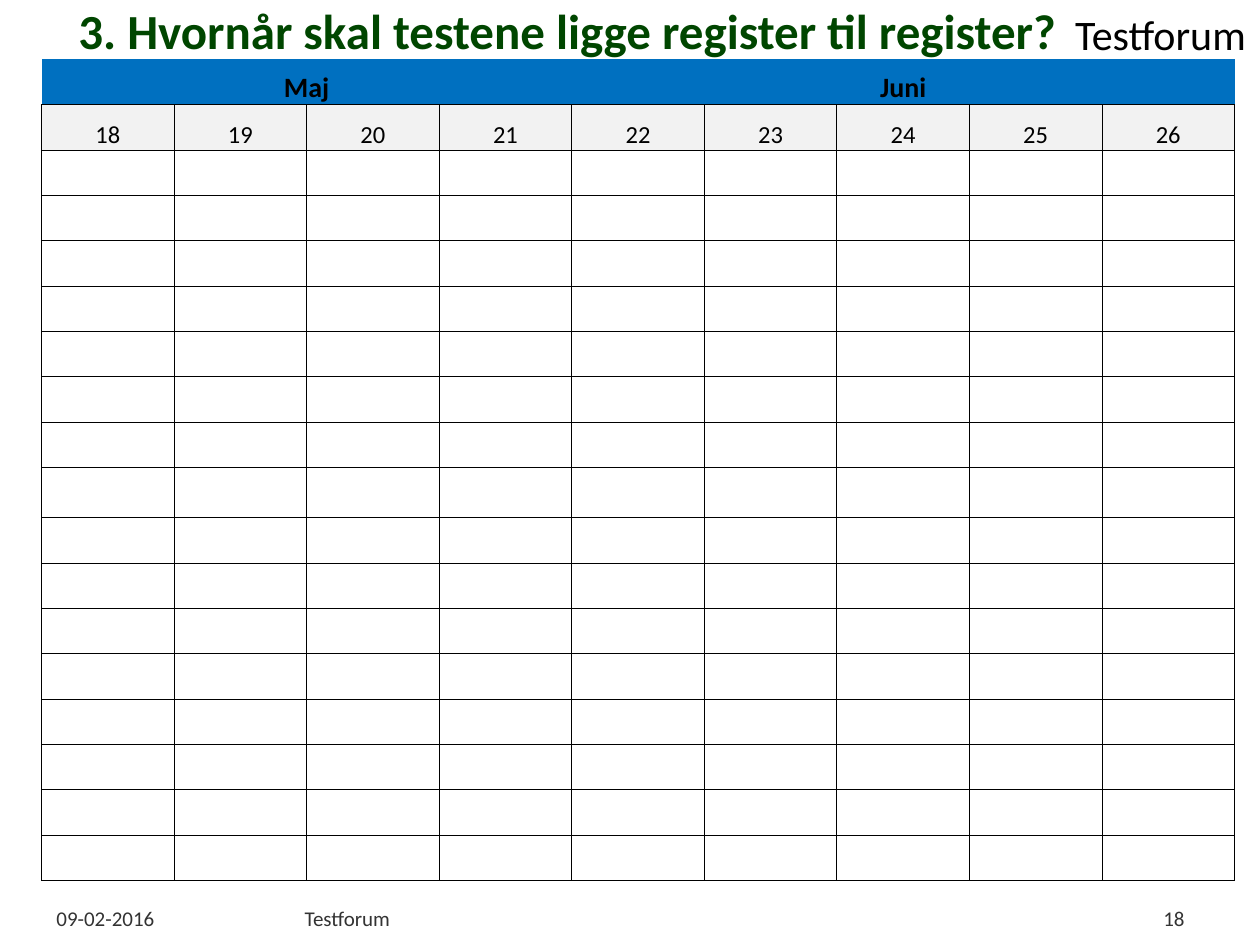
from dataclasses import dataclass
from lxml.etree import SubElement
from pptx import Presentation
from pptx.dml.color import RGBColor as Color
from pptx.enum.text import MSO_ANCHOR as Anchor, PP_ALIGN as Align
from pptx.oxml.ns import qn
from pptx.util import Inches, Pt


@dataclass(frozen=True)
class Theme:
    font: str = "Calibri"
    black: str = "000000"
    green: str = "004600"
    gray: str = "333333"
    blue: str = "0070C0"
    pale: str = "F2F2F2"
    title: int = 28
    brand: int = 24
    month: int = 16
    week: int = 14
    foot: int = 12
    line: float = 0.5


@dataclass(frozen=True)
class Label:
    text: str
    left: float
    top: float
    width: float
    height: float
    size: int
    color: str
    align: Align = Align.LEFT
    bold: bool = False
    anchor: Anchor = Anchor.TOP
    wrap: bool = True


@dataclass(frozen=True)
class Month:
    name: str
    first: int
    last: int


THEME = Theme()
FOOT = dict(top=7.14, height=0.16, size=THEME.foot, color=THEME.gray)
BRAND = Label("Testforum", 8.42, 0.02, 1.58, 0.5, THEME.brand, THEME.black,
              Align.CENTER, wrap=False)
TITLE = Label("3. Hvornår skal testene ligge register til register?",
              0, -0.08, 9, 0.63, THEME.title, THEME.green,
              Align.CENTER, True, Anchor.MIDDLE)
FEET = [
    Label("09-02-2016", left=0.35, width=2.37, **FOOT),
    Label("Testforum", left=2.32, width=6.22, **FOOT),
    Label("18", left=8.78, width=0.72, align=Align.RIGHT, **FOOT),
]
MONTHS = [Month("Maj", 18, 21), Month("Juni", 22, 26)]
WEEKS = range(18, 27)
ROWS, TALL = 18, 9
SIDES = ("L", "R", "T", "B")


def write(frame, text: str, *, size: int, color: str,
          align: Align = Align.LEFT, bold: bool = False) -> None:
    para = frame.paragraphs[0]
    para.alignment = align
    run = para.add_run()
    run.text = text
    font = run.font
    font.name, font.size, font.bold = THEME.font, Pt(size), bold
    font.color.rgb = Color.from_string(color)


def draw_label(slide, label: Label) -> None:
    box = slide.shapes.add_textbox(Inches(label.left), Inches(label.top),
                                   Inches(label.width), Inches(label.height))
    frame = box.text_frame
    frame.word_wrap = label.wrap
    frame.vertical_anchor = label.anchor
    write(frame, label.text, size=label.size, color=label.color,
          align=label.align, bold=label.bold)


def set_edges(cell, shown: tuple[str, ...]) -> None:
    props = cell._tc.get_or_add_tcPr()
    for spot, side in enumerate(SIDES):
        line = SubElement(props, qn(f"a:ln{side}"), w=str(Pt(THEME.line)))
        if side in shown:
            fill = SubElement(line, qn("a:solidFill"))
            SubElement(fill, qn("a:srgbClr"), val=THEME.black)
        else:
            SubElement(line, qn("a:noFill"))
        props.insert(spot, line)


def style_cell(cell, color: str | None, shown: tuple[str, ...]) -> None:
    cell.margin_left = cell.margin_right = cell.margin_top = Inches(0.01)
    cell.margin_bottom = 0
    cell.vertical_anchor = Anchor.BOTTOM
    if color:
        cell.fill.solid()
        cell.fill.fore_color.rgb = Color.from_string(color)
    else:
        cell.fill.background()
    set_edges(cell, shown)


def draw_plan(slide) -> None:
    count = len(WEEKS)
    table = slide.shapes.add_table(ROWS, count, Inches(0.33), Inches(0.47),
                                   Inches(9.47), Inches(6.52)).table
    table.horz_banding = table.first_row = False
    fills = {0: THEME.blue, 1: THEME.pale}
    for index, row in enumerate(table.rows):
        row.height = Inches(0.4 if index == TALL else 0.36)
        for cell in row.cells:
            style_cell(cell, fills.get(index), SIDES if index else ("B",))
    for month in MONTHS:
        start, end = WEEKS.index(month.first), WEEKS.index(month.last)
        head = table.cell(0, start)
        head.merge(table.cell(0, end))
        write(head.text_frame, month.name, size=THEME.month,
              color=THEME.black, align=Align.CENTER, bold=True)
    for col, week in enumerate(WEEKS):
        write(table.cell(1, col).text_frame, str(week), size=THEME.week,
              color=THEME.black, align=Align.CENTER)


def main() -> None:
    deck = Presentation()
    deck.slide_width, deck.slide_height = Inches(10), Inches(7.5)
    slide = deck.slides.add_slide(deck.slide_layouts[6])
    for label in (BRAND, *FEET):
        draw_label(slide, label)
    draw_plan(slide)
    draw_label(slide, TITLE)
    deck.save("out.pptx")


if __name__ == "__main__":
    main()
